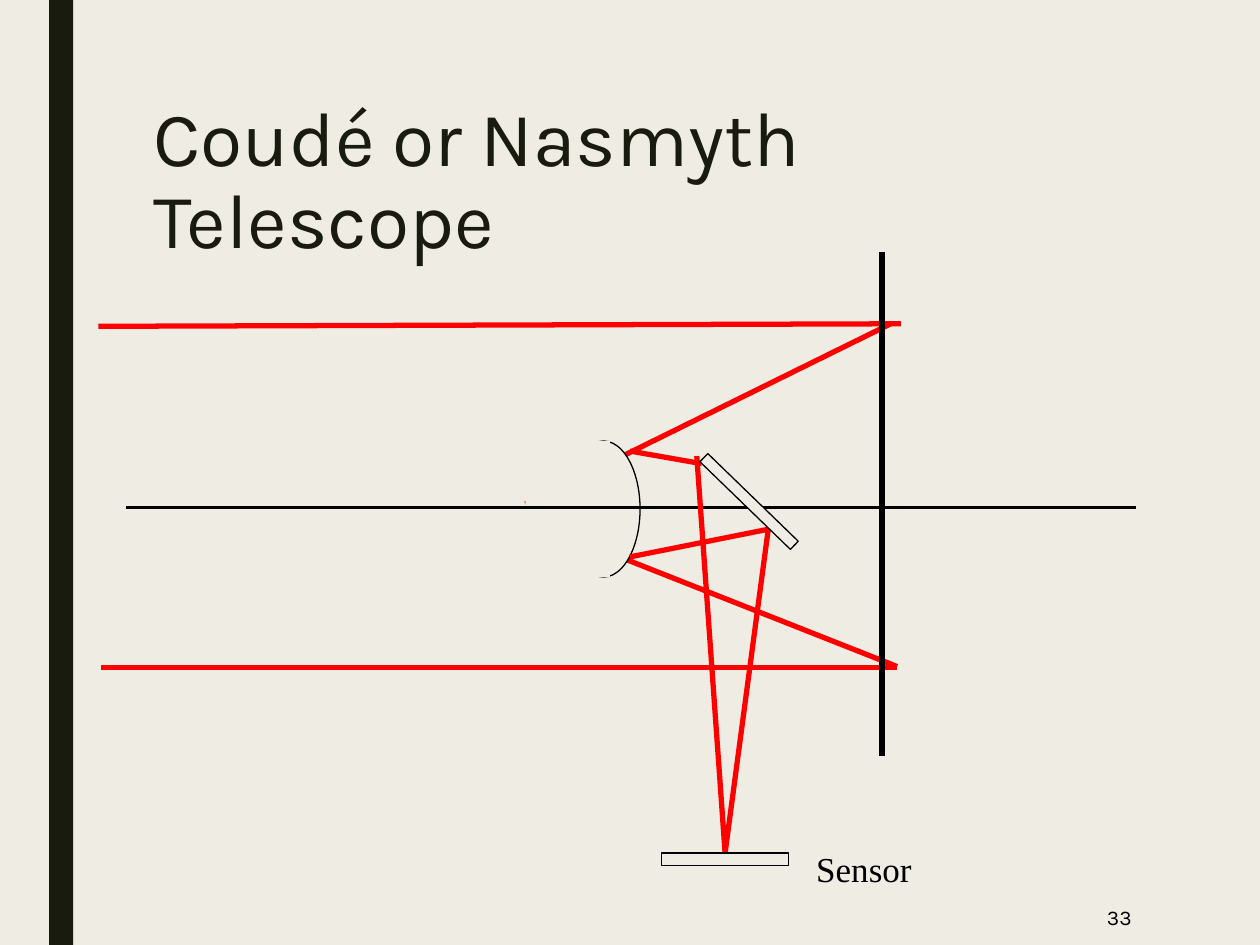
from typing import NamedTuple

from lxml.etree import SubElement
from pptx import Presentation
from pptx.dml.color import RGBColor
from pptx.enum.shapes import MSO_CONNECTOR, MSO_SHAPE
from pptx.enum.text import MSO_ANCHOR, MSO_AUTO_SIZE, PP_ALIGN
from pptx.oxml.ns import qn
from pptx.util import Inches, Pt

PAPER, INK, BLACK, RED = "EFEDE3", "191B0E", "000000", "FF0000"
AXIS_Y = 4.03
CURVE_STEPS = 16


class Point(NamedTuple):
    x: float
    y: float


class Segment(NamedTuple):
    start: Point
    end: Point
    color: str = RED
    width: float = 3


class Plate(NamedTuple):
    left: float
    top: float
    width: float
    height: float
    fill: str = PAPER
    outline: str | None = BLACK
    kind: MSO_SHAPE = MSO_SHAPE.RECTANGLE
    rotation: float = 0


INCOMING_RAYS = [
    Segment(Point(0.78, 2.59), Point(7.15, 2.57)),
    Segment(Point(4.17, 4), Point(7.07, 2.57)),
    Segment(Point(0.8, 5.3), Point(7.12, 5.3)),
    Segment(Point(4.31, 4.18), Point(7.12, 5.29)),
]
SECONDARY_RAYS_AND_AXIS = [
    Segment(Point(5, 3.58), Point(5.57, 3.68)),
    Segment(Point(5, 4.42), Point(6.2, 4.18)),
    Segment(Point(1, AXIS_Y), Point(9.02, AXIS_Y), BLACK, 1.5),
]
SENSOR_RAYS = [
    Segment(Point(6.1, 4.18), Point(5.75, 6.77)),
    Segment(Point(5.53, 3.62), Point(5.75, 6.77)),
]
SPINE = Plate(0.39, 0, 0.19, 7.5, INK, None)
SECONDARY_MIRROR = Plate(4.5, 3.5, 0.58, 1.08, kind=MSO_SHAPE.OVAL)
SECONDARY_BACK = Plate(4.17, 3.5, 0.67, 1.08, outline=None)
SENSOR = Plate(5.25, 6.77, 1.01, 0.1)
FLAT_MIRROR = Plate(5.9, 3.48, 0.09, 1, rotation=134.1)

# Upper half of the primary mirror: two Bézier arcs sharing a point.
PRIMARY_ARCS = [
    [Point(6.84, 2), Point(6.94, 2.15), Point(7.04, 2.3), Point(7.12, 2.52)],
    [Point(7.12, 2.52), Point(7.2, 2.74), Point(7.27, 3.07), Point(7.31, 3.33)],
    [Point(7.31, 3.33), Point(7.34, 3.58), Point(7.32, 3.93), Point(7.32, 4.05)],
]


def rgb(color: str) -> RGBColor:
    return RGBColor.from_string(color)


def draw_segment(shapes, segment: Segment):
    start, end = segment.start, segment.end
    connector = shapes.add_connector(
        MSO_CONNECTOR.STRAIGHT,
        Inches(start.x), Inches(start.y), Inches(end.x), Inches(end.y),
    )
    connector.line.color.rgb = rgb(segment.color)
    connector.line.width = Pt(segment.width)
    SubElement(connector._element.spPr, qn("a:effectLst"))
    return connector


def draw_plate(shapes, plate: Plate):
    shape = shapes.add_shape(
        plate.kind,
        Inches(plate.left), Inches(plate.top),
        Inches(plate.width), Inches(plate.height),
    )
    shape.shadow.inherit = False
    shape.rotation = plate.rotation
    shape.fill.solid()
    shape.fill.fore_color.rgb = rgb(plate.fill)
    if plate.outline:
        shape.line.color.rgb = rgb(plate.outline)
        shape.line.width = Pt(0.75)
    else:
        shape.line.fill.background()
    return shape


def bezier(controls: list[Point], t: float) -> Point:
    weights = ((1 - t) ** 3, 3 * t * (1 - t) ** 2, 3 * t**2 * (1 - t), t**3)
    return Point(
        sum(w * p.x for w, p in zip(weights, controls)),
        sum(w * p.y for w, p in zip(weights, controls)),
    )


def draw_primary_mirror(shapes) -> None:
    upper = [PRIMARY_ARCS[0][0]] + [
        bezier(arc, step / CURVE_STEPS)
        for arc in PRIMARY_ARCS
        for step in range(1, CURVE_STEPS + 1)
    ]
    lower = [Point(p.x, 2 * AXIS_Y - p.y) for p in upper]
    group = shapes.add_group_shape()
    for half in (upper, lower):
        builder = group.shapes.build_freeform(*half[0], scale=Inches(1))
        builder.add_line_segments(half[1:], close=False)
        curve = builder.convert_to_shape()
        curve.shadow.inherit = False
        curve.fill.background()
        curve.line.color.rgb = rgb(BLACK)
        curve.line.width = Pt(3)


def style_text(frame, text: str, font: str, size: float, color: str):
    frame.text = text
    paragraph = frame.paragraphs[0]
    paragraph.font.name = font
    paragraph.font.size = Pt(size)
    paragraph.font.color.rgb = rgb(color)
    return paragraph


def add_title(slide) -> None:
    title = slide.shapes.title
    title.left, title.top = Inches(1.12), Inches(0.75)
    title.width, title.height = Inches(7.88), Inches(1.62)
    frame = title.text_frame
    frame.vertical_anchor = MSO_ANCHOR.TOP
    frame.auto_size = MSO_AUTO_SIZE.NONE
    heading = style_text(frame, "Coudé or Nasmyth Telescope", "Karla", 44, INK)
    heading.alignment = PP_ALIGN.LEFT
    heading.line_spacing = 0.89


def add_sensor_label(shapes) -> None:
    label = shapes.add_textbox(Inches(6.38), Inches(6.68), Inches(0.96), Inches(0.43))
    label.text_frame.word_wrap = False
    style_text(label.text_frame, "Sensor", "Times New Roman", 20, BLACK)


def add_page_number(shapes) -> None:
    number = shapes.add_textbox(Inches(7.77), Inches(7.06), Inches(1.31), Inches(0.44))
    number.text_frame.word_wrap = True
    number.text_frame.vertical_anchor = MSO_ANCHOR.MIDDLE
    style_text(number.text_frame, "33", "Karla", 12, BLACK).alignment = PP_ALIGN.RIGHT


def main() -> None:
    deck = Presentation()
    deck.slide_width, deck.slide_height = Inches(10), Inches(7.5)
    slide = deck.slides.add_slide(deck.slide_layouts[5])
    slide.background.fill.solid()
    slide.background.fill.fore_color.rgb = rgb(PAPER)
    shapes = slide.shapes

    draw_plate(shapes, SPINE)
    add_title(slide)
    for ray in INCOMING_RAYS:
        draw_segment(shapes, ray)
    draw_primary_mirror(shapes)
    add_sensor_label(shapes)

    secondary = shapes.add_group_shape()
    for part in (SECONDARY_MIRROR, SECONDARY_BACK):
        draw_plate(secondary.shapes, part)
    for segment in SECONDARY_RAYS_AND_AXIS:
        draw_segment(shapes, segment)

    sensor_rays = [draw_segment(shapes, ray) for ray in SENSOR_RAYS]
    sensor = draw_plate(shapes, SENSOR)
    for ray in sensor_rays:
        ray.end_connect(sensor, 0)
    draw_plate(shapes, FLAT_MIRROR)
    add_page_number(shapes)
    deck.save("out.pptx")


if __name__ == "__main__":
    main()
